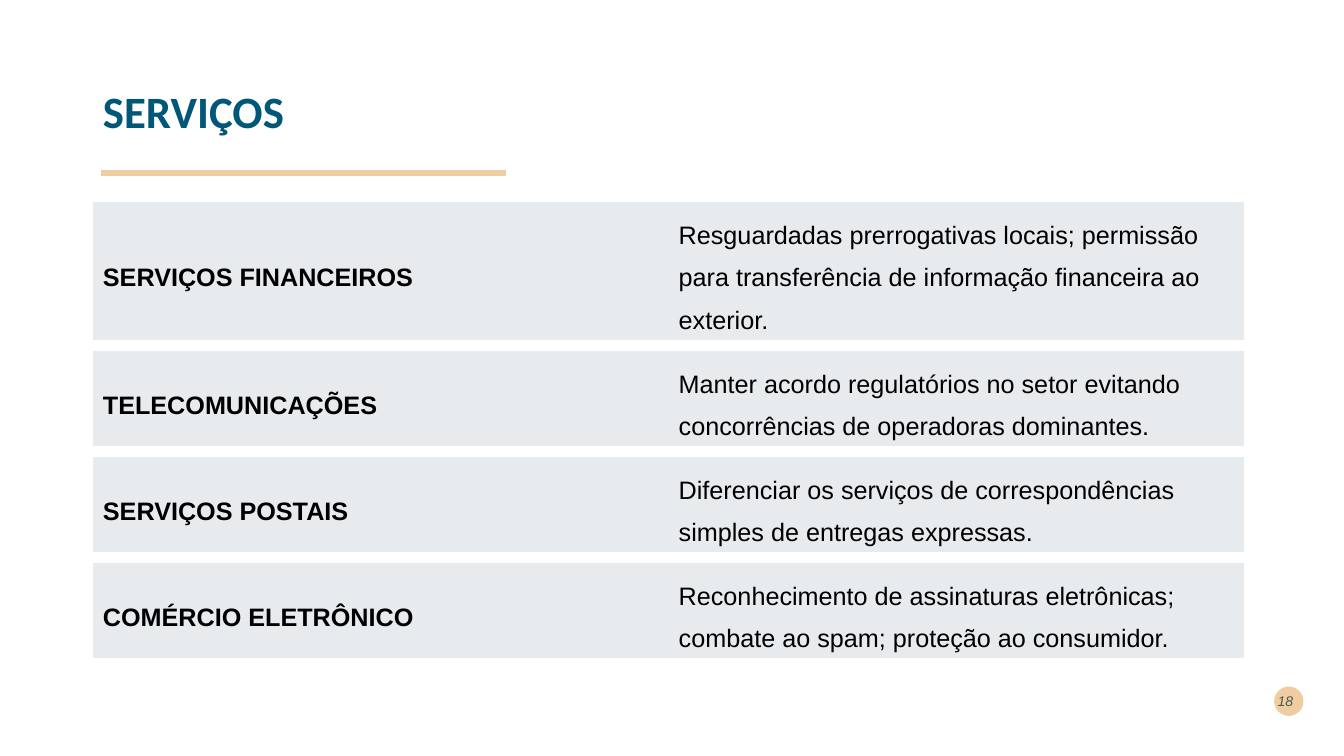
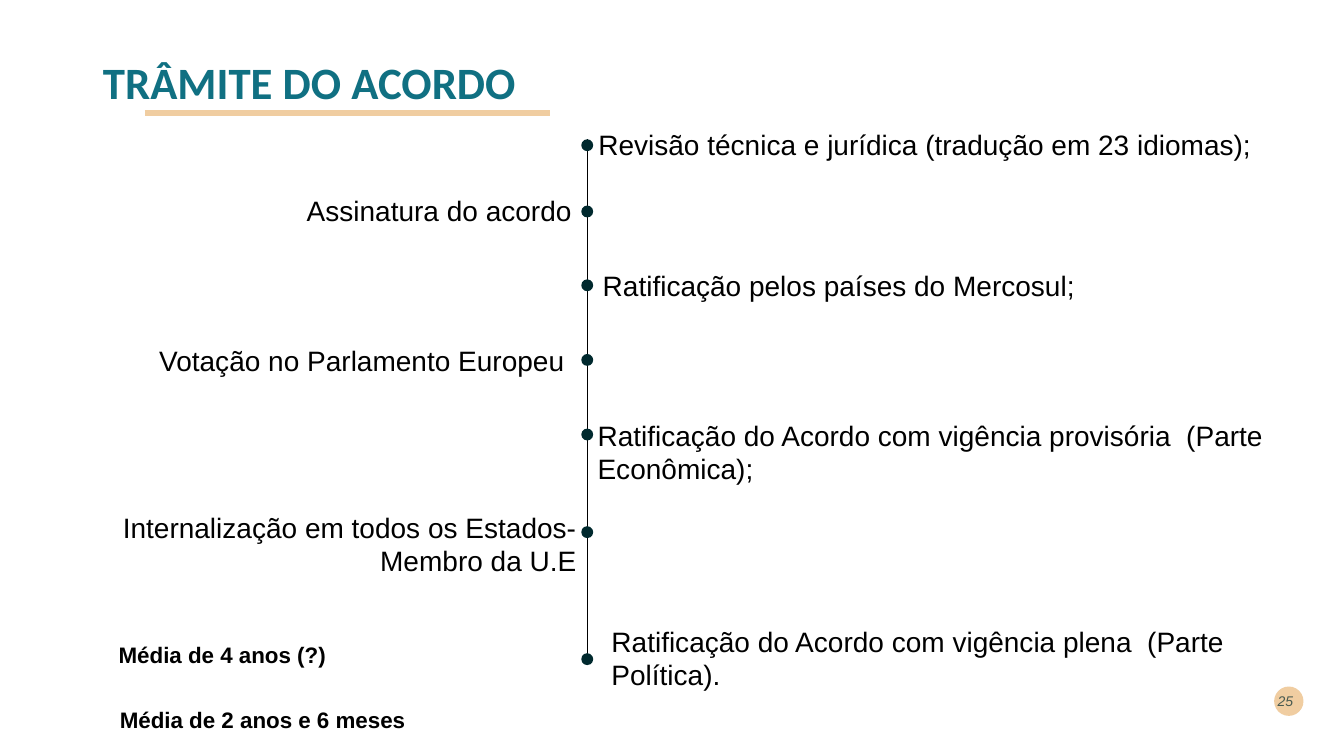
from dataclasses import dataclass

from lxml.etree import SubElement
from pptx import Presentation
from pptx.dml.color import RGBColor
from pptx.enum.shapes import MSO_CONNECTOR, MSO_SHAPE
from pptx.enum.text import MSO_ANCHOR, MSO_AUTO_SIZE, PP_ALIGN
from pptx.oxml.ns import qn
from pptx.shapes.autoshape import Shape
from pptx.shapes.connector import Connector
from pptx.slide import Slide
from pptx.text.text import TextFrame
from pptx.util import Cm, Pt

# Shared look
SAND, DARK, BLACK, GREY = "F0CDA1", "00292E", "000000", "E7EBED"
BODY, HEAD = "Arial", "Calibri"
NO_GRID = "{2D5ABB26-0587-4C30-8999-92F81FD0307C}"

# Services table, in cm
LEFT, TOP, COLUMN, GAP = 2.34, 5.08, 14.51, 0.27

# Timeline, in cm
AXIS, DOT = 14.8, 0.3


@dataclass
class Service:
    name: str
    detail: str
    height: float = 2.4


@dataclass
class Step:
    text: str
    dot: float
    left: float
    top: float
    width: float
    height: float = 1.12


@dataclass
class Note:
    text: str
    left: float
    top: float
    width: float


SERVICES = [
    Service("SERVIÇOS FINANCEIROS",
            "Resguardadas prerrogativas locais; permissão para transferência "
            "de informação financeira ao exterior.", 3.5),
    Service("TELECOMUNICAÇÕES",
            "Manter acordo regulatórios no setor evitando concorrências "
            "de operadoras dominantes."),
    Service("SERVIÇOS POSTAIS",
            "Diferenciar os serviços de correspondências simples "
            "de entregas expressas."),
    Service("COMÉRCIO ELETRÔNICO",
            "Reconhecimento de assinaturas eletrônicas; combate ao spam; "
            "proteção ao consumidor."),
]

STEPS = [
    Step("Revisão técnica e jurídica (tradução em 23 idiomas);",
         3.51, 14.83, 3.1, 19.03),
    Step("Assinatura do acordo", 5.18, 2.87, 4.75, 11.79),
    Step("Ratificação pelos países do Mercosul;", 7.04, 14.94, 6.63, 14.05),
    Step("Votação no Parlamento Europeu", 8.92, 2.48, 8.53, 12),
    Step("Ratificação do Acordo com vigência provisória  (Parte\nEconômica);",
         10.8, 14.81, 10.41, 19.05, 1.96),
    Step("Internalização em todos os Estados-Membro da U.E",
         13.26, 0.89, 12.73, 13.89, 1.96),
    Step("Ratificação do Acordo com vigência plena  (Parte Política).",
         16.46, 15.16, 15.6, 17.42, 1.96),
]

NOTES = [
    Note("Média de 4 anos (?)", 2.74, 16.03, 8.38),
    Note("Média de 2 anos e 6 meses", 2.77, 17.68, 10.49),
]


def rgb(code: str) -> RGBColor:
    return RGBColor.from_string(code)


def style(frame: TextFrame, size: float, color: str = BLACK, font: str = BODY,
          bold: bool = False, italic: bool = False,
          align: PP_ALIGN = PP_ALIGN.LEFT, space: float = 1) -> None:
    for para in frame.paragraphs:
        para.alignment = align
        para.line_spacing = space
        for run in para.runs:
            run.font.name, run.font.size = font, Pt(size)
            run.font.bold, run.font.italic = bold, italic
            run.font.color.rgb = rgb(color)


def write(slide: Slide, text: str, left: float, top: float, width: float,
          height: float) -> TextFrame:
    box = slide.shapes.add_textbox(Cm(left), Cm(top), Cm(width), Cm(height))
    frame = box.text_frame
    frame.word_wrap = True
    frame.auto_size = MSO_AUTO_SIZE.SHAPE_TO_FIT_TEXT
    frame.text = text
    return frame


def disc(slide: Slide, kind: MSO_SHAPE, left: float, top: float, size: float,
         color: str) -> Shape:
    shape = slide.shapes.add_shape(kind, Cm(left), Cm(top), Cm(size), Cm(size))
    shape.shadow.inherit = False
    shape.fill.solid()
    shape.fill.fore_color.rgb = rgb(color)
    shape.line.fill.background()
    return shape


def rule(slide: Slide, x1: float, y1: float, x2: float, y2: float,
         color: str, weight: float) -> Connector:
    line = slide.shapes.add_connector(
        MSO_CONNECTOR.STRAIGHT, Cm(x1), Cm(y1), Cm(x2), Cm(y2))
    line.line.color.rgb = rgb(color)
    line.line.width = Pt(weight)
    SubElement(line._element.spPr, qn("a:effectLst"))
    return line


def start(deck: Presentation, title: str, color: str, top: float, left: float,
          under: float, number: int) -> Slide:
    """Add a slide with its title, underline and page number."""
    slide = deck.slides.add_slide(deck.slide_layouts[5])
    head = slide.shapes.title
    head.left, head.top = Cm(2.34), Cm(top)
    head.width, head.height = Cm(29.21), Cm(3.68)
    frame = head.text_frame
    frame.text = title
    frame.vertical_anchor = MSO_ANCHOR.MIDDLE
    style(frame, 32, color, HEAD, bold=True, space=0.9)
    rule(slide, left, under, left + 10.2, under, SAND, 4.32)

    # Page number on its disc
    disc(slide, MSO_SHAPE.OVAL, 32.11, 17.3, 0.74, SAND)
    page = write(slide, str(number), 31.85, 17.15, 0.99, 1.02)
    page.auto_size = MSO_AUTO_SIZE.NONE
    page.vertical_anchor = MSO_ANCHOR.MIDDLE
    style(page, 10, DARK, italic=True, align=PP_ALIGN.RIGHT)
    for tint in page._txBody.iter(qn("a:srgbClr")):
        SubElement(tint, qn("a:alpha"), val="70000")
    return slide


def band(slide: Slide, item: Service, top: float) -> None:
    table = slide.shapes.add_table(
        1, 2, Cm(LEFT), Cm(top), Cm(2 * COLUMN), Cm(item.height)).table
    table.first_row = table.horz_banding = False
    table._tbl.tblPr.find(qn("a:tableStyleId")).text = NO_GRID
    for col, text in enumerate((item.name, item.detail)):
        cell = table.cell(0, col)
        cell.text_frame.text = text
        cell.vertical_anchor = MSO_ANCHOR.MIDDLE
        cell.fill.solid()
        cell.fill.fore_color.rgb = rgb(GREY)
        style(cell.text_frame, 18, bold=col == 0, space=1.5)


def main() -> None:
    deck = Presentation()
    deck.slide_width, deck.slide_height = Cm(33.87), Cm(19.05)

    # Services
    slide = start(deck, "SERVIÇOS", "005778", 1.02, 2.55, 4.35, 18)
    top = TOP
    for item in SERVICES:
        band(slide, item, top)
        top += item.height + GAP

    # Timeline, with steps on alternate sides
    slide = start(deck, "TRÂMITE DO ACORDO", "107082", 0.3, 3.65, 2.85, 25)
    rule(slide, AXIS, STEPS[0].dot, AXIS, STEPS[-1].dot + DOT, BLACK, 0.5)
    for index, step in enumerate(STEPS):
        side = PP_ALIGN.RIGHT if index % 2 else PP_ALIGN.LEFT
        frame = write(slide, step.text, step.left, step.top, step.width,
                      step.height)
        style(frame, 20, align=side)
        disc(slide, MSO_SHAPE.FLOWCHART_CONNECTOR, AXIS - DOT / 2, step.dot,
             DOT, DARK)

    # Average durations
    for note in NOTES:
        frame = write(slide, note.text, note.left, note.top, note.width, 0.94)
        style(frame, 16, bold=True)

    deck.save("out.pptx")


if __name__ == "__main__":
    main()
